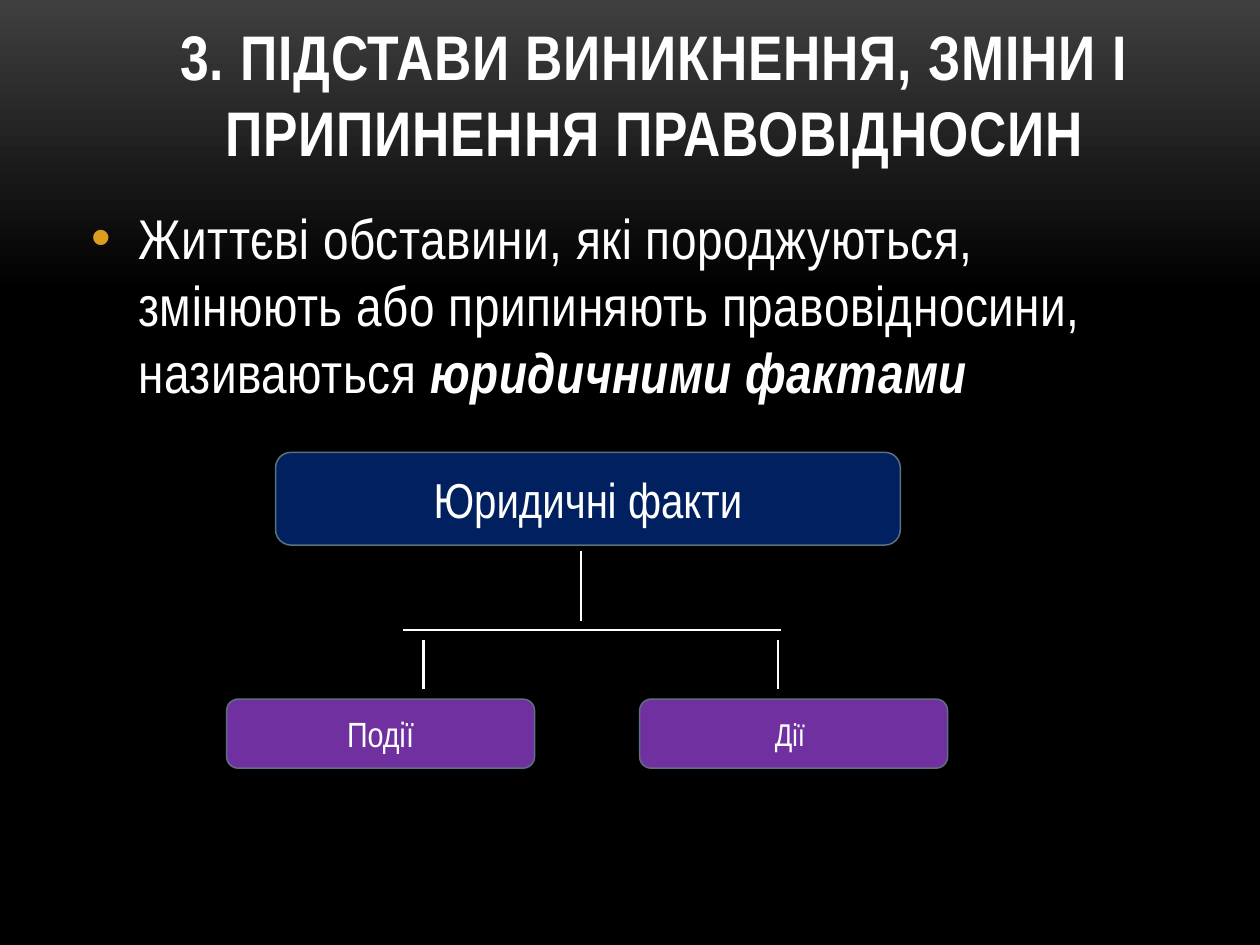
from lxml.etree import SubElement
from pptx import Presentation
from pptx.dml.color import RGBColor
from pptx.enum.shapes import MSO_CONNECTOR, MSO_SHAPE
from pptx.enum.text import MSO_ANCHOR, PP_ALIGN
from pptx.oxml.ns import qn
from pptx.util import Pt

WHITE = RGBColor(0xFF, 0xFF, 0xFF)
BLACK = RGBColor(0x00, 0x00, 0x00)
GRAY = RGBColor(0x3F, 0x3F, 0x3F)
NAVY = RGBColor(0x00, 0x20, 0x60)
PURPLE = RGBColor(0x70, 0x30, 0xA0)
OUTLINE = RGBColor(0x5D, 0x70, 0x80)
FONT = "Arial Narrow"


def add_span(paragraph, text, size, bold=False, italic=False, spacing=0):
    """Append a white run; spacing is the letter spacing in points."""
    span = paragraph.add_run()
    span.text = text
    span.font.name = FONT
    span.font.size = Pt(size)
    span.font.bold = bold
    span.font.italic = italic
    span.font.color.rgb = WHITE
    if spacing:
        span.font._element.set("spc", str(round(spacing * 100)))


def add_text_box(page, left, top, width, height, anchor):
    frame = page.shapes.add_textbox(Pt(left), Pt(top), Pt(width), Pt(height)).text_frame
    frame.word_wrap = True
    frame.vertical_anchor = anchor
    return frame.paragraphs[0]


deck = Presentation()
deck.slide_width = Pt(720)
deck.slide_height = Pt(540)
page = deck.slides.add_slide(deck.slide_layouts[6])

# Background: gray at the top fading to black
fill = page.background.fill
fill.gradient()
fill.gradient_angle = 270
for stop, color, position in zip(fill.gradient_stops, (GRAY, BLACK), (0, 0.31)):
    stop.color.rgb = color
    stop.position = position

# Title
title = add_text_box(page, 62, 0, 624, 100, MSO_ANCHOR.BOTTOM)
title.alignment = PP_ALIGN.CENTER
add_span(title, "3. ПІДСТАВИ ВИНИКНЕННЯ, ЗМІНИ І ПРИПИНЕННЯ ПРАВОВІДНОСИН",
         36, bold=True, spacing=0.5)

# Definition with a bullet
definition = add_text_box(page, 45, 112.5, 624, 379, MSO_ANCHOR.TOP)
properties = definition._p.get_or_add_pPr()
properties.set("marL", str(Pt(27)))
properties.set("indent", str(-Pt(27)))
bullet_color = SubElement(properties, qn("a:buClr"))
SubElement(bullet_color, qn("a:srgbClr"), val="DC9E1F")
SubElement(properties, qn("a:buFont"), typeface="Arial")
SubElement(properties, qn("a:buChar"), char="•")
definition.space_after = Pt(6)
add_span(definition, "Життєві обставини, які породжуються, змінюють або припиняють "
         "правовідносини, називаються ", 32, spacing=0.3)
add_span(definition, "юридичними фактами", 32, bold=True, italic=True, spacing=0.3)

# Branches of the tree
for x1, y1, x2, y2 in (
    (332, 315, 332, 355),
    (230.5, 360, 446.5, 360),
    (242, 366, 242, 394),
    (444.5, 366, 444.5, 394),
):
    branch = page.shapes.add_connector(
        MSO_CONNECTOR.STRAIGHT, Pt(x1), Pt(y1), Pt(x2), Pt(y2))
    branch.line.color.rgb = WHITE
    branch.line.width = Pt(1.5)
    SubElement(branch._element.spPr, qn("a:effectLst"))

# Nodes of the tree
for text, size, color, left, top, width, height in (
    ("Юридичні факти", 28, NAVY, 157.5, 258.5, 357, 53),
    ("Події", 20, PURPLE, 129.5, 399.5, 176, 39.5),
    ("Дії ", 18, PURPLE, 365.5, 399.5, 176, 39.5),
):
    node = page.shapes.add_shape(
        MSO_SHAPE.ROUNDED_RECTANGLE, Pt(left), Pt(top), Pt(width), Pt(height))
    node.shadow.inherit = False
    node.fill.solid()
    node.fill.fore_color.rgb = color
    node.line.color.rgb = OUTLINE
    node.line.width = Pt(0.85)
    node.text_frame.vertical_anchor = MSO_ANCHOR.MIDDLE
    label = node.text_frame.paragraphs[0]
    label.alignment = PP_ALIGN.CENTER
    add_span(label, text, size)

deck.save("out.pptx")
